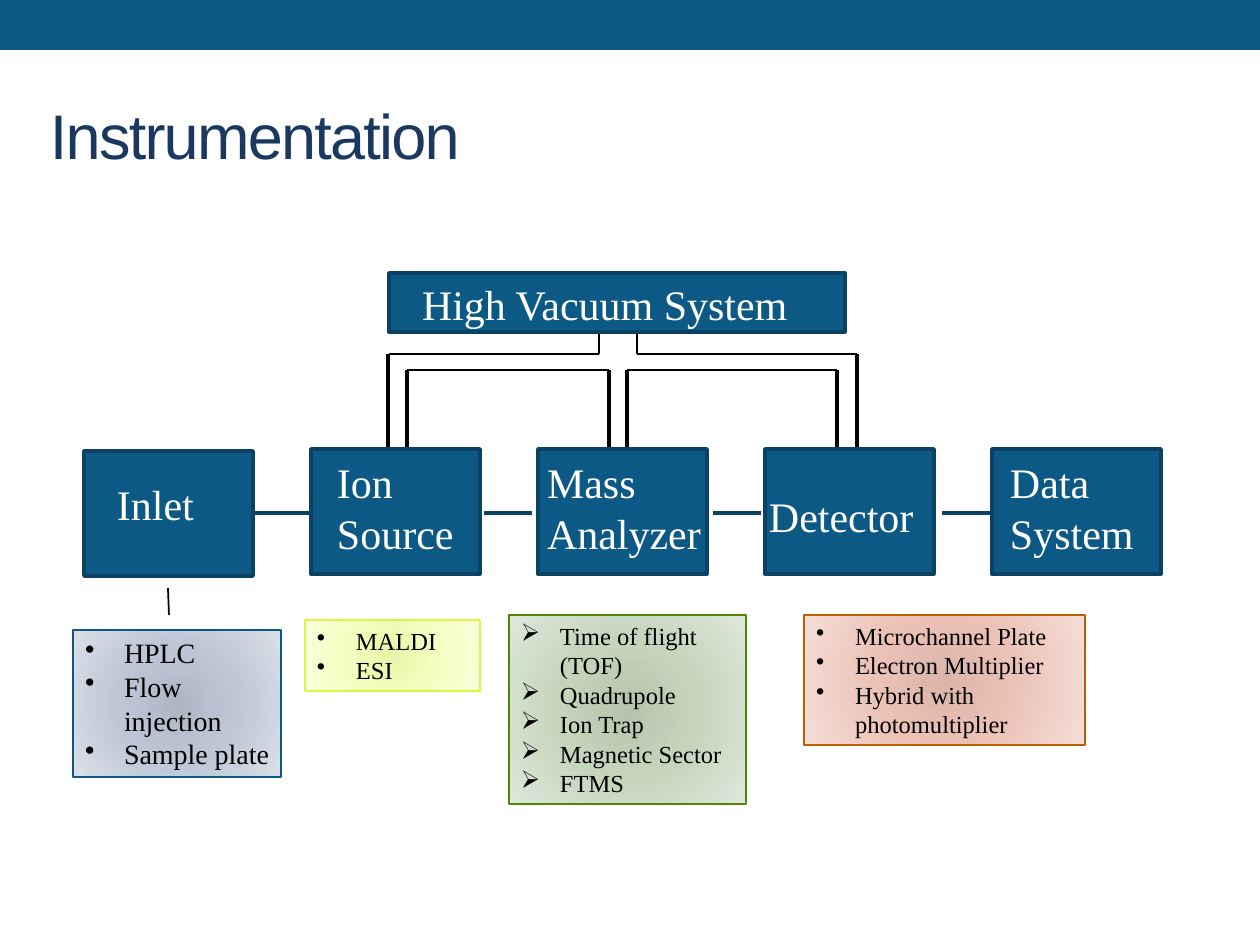
from dataclasses import dataclass

from pptx import Presentation
from pptx.dml.color import RGBColor
from pptx.enum.shapes import MSO_CONNECTOR as Conn, MSO_SHAPE as Geo
from pptx.enum.text import MSO_ANCHOR as Anchor, MSO_AUTO_SIZE as Fit, PP_ALIGN as Align
from pptx.oxml import parse_xml
from pptx.oxml.ns import nsdecls
from pptx.oxml.xmlchemy import OxmlElement
from pptx.util import Pt

EMU_PER_PX = 914400 / 126
BLUE, DARK_BLUE, NAVY = "0C5986", "094263", "1B3861"
BLACK, WHITE = "000000", "FFFFFF"
SERIF, SANS = "Times New Roman", "Arial"
MARGINS = {"margin_left": 12, "margin_right": 12, "margin_top": 6, "margin_bottom": 6}

Rect = tuple[int, int, int, int]


@dataclass
class Label:
    at: Rect
    lines: list[str]


@dataclass
class Wires:
    color: str
    width: float
    ends: list[Rect]


@dataclass
class Panel:
    at: Rect
    stops: tuple[str, str, str]
    border: str
    size: int
    bullet: str
    items: list[str]


STAGE_LEFT, STAGE_STEP, STAGE_W, STAGE_H = 84, 227, 169, 125
STAGE_TOPS = [451, 449, 449, 449, 449]
VACUUM = (389, 273, 456, 59)

LABELS = [
    Label((105, 473, 103, 64), ["Inlet"]),
    Label((325, 451, 151, 115), ["Ion", "Source"]),
    Label((535, 451, 183, 115), ["Mass", "Analyzer"]),
    Label((757, 485, 173, 64), ["Detector"]),
    Label((998, 451, 159, 115), ["Data", "System"]),
    Label((410, 273, 394, 64), ["High Vacuum System"]),
]

STAGE_Y, PIPE_BOTTOM, INNER_Y, OUTER_Y, VACUUM_Y = 513, 447, 370, 354, 333
WIRES = [
    Wires(DARK_BLUE, 2.08, [(255, STAGE_Y, 312, STAGE_Y)]
          + [(x, STAGE_Y, x + 48, STAGE_Y) for x in (484, 713, 942)]),
    Wires(BLACK, 2, [(x, PIPE_BOTTOM, x, INNER_Y) for x in (407, 609, 627, 837)]
          + [(x, PIPE_BOTTOM, x, OUTER_Y) for x in (388, 857)]),
    Wires(BLACK, 1, [(407, INNER_Y, 609, INNER_Y), (627, INNER_Y, 837, INNER_Y),
                     (389, OUTER_Y, 599, OUTER_Y), (637, OUTER_Y, 857, OUTER_Y),
                     (599, OUTER_Y, 599, VACUUM_Y), (637, OUTER_Y, 637, VACUUM_Y),
                     (168, 588, 169, 615)]),
]

PANELS = [
    Panel((305, 620, 175, 71), ("E6F5A9", "F2FFBE", "F8FFDC"), "DDF53D", 14, "•",
          ["MALDI", "ESI"]),
    Panel((509, 615, 237, 189), ("B5C5AD", "C4D5BC", "DFE8DB"), "508709", 14, "➢",
          ["Time of flight (TOF)", "Quadrupole", "Ion Trap", "Magnetic Sector", "FTMS"]),
    Panel((804, 615, 281, 130), ("DBB4AA", "ECC2B7", "F5DED8"), "BF5E00", 14, "•",
          ["Microchannel Plate", "Electron Multiplier", "Hybrid with photomultiplier"]),
    Panel((73, 630, 208, 147), ("ADB7C4", "BCC6D5", "DBE0E8"), BLUE, 16, "•",
          ["HPLC", "Flow injection", "Sample plate"]),
]


def px(n: int) -> int:
    """Turn pixels into EMU."""
    return round(n * EMU_PER_PX)


def rgb(value: str) -> RGBColor:
    """Turn a hex string into a colour."""
    return RGBColor.from_string(value)


def set_line(line, color: str, width: float) -> None:
    """Give a line its colour and its width in points."""
    line.color.rgb = rgb(color)
    line.width = Pt(width)


def add_box(s, at: Rect, line: str | None = None, width: float = 2.08):
    """Draw a blue rectangle with an optional border."""
    sp = s.shapes.add_shape(Geo.RECTANGLE, *map(px, at))
    sp.shadow.inherit = False
    sp.fill.solid()
    sp.fill.fore_color.rgb = rgb(BLUE)
    if line:
        set_line(sp.line, line, width)
    else:
        sp.line.fill.background()
    return sp


def set_frame(tf, **formats) -> None:
    """Apply the margins and the given values to a text frame."""
    for name, value in MARGINS.items():
        setattr(tf, name, px(value))
    for name, value in formats.items():
        setattr(tf, name, value)


def write(tf, lines: list[str], size: int, color: str, font: str, bullet: str = "") -> None:
    """Write one left-aligned paragraph for each line, bulleted on request."""
    for i, line in enumerate(lines):
        p = tf.add_paragraph() if i else tf.paragraphs[0]
        p.alignment = Align.LEFT
        if bullet:
            pPr = p._p.get_or_add_pPr()
            pPr.set("marL", str(px(39)))
            pPr.set("indent", str(-px(39)))
            bu = OxmlElement("a:buChar")
            bu.set("char", bullet)
            pPr.append(bu)
        r = p.add_run()
        r.text = line
        for name, value in {"size": Pt(size), "name": font}.items():
            setattr(r.font, name, value)
        r.font.color.rgb = rgb(color)


def add_title(s, text: str) -> None:
    """Add the slide title with tightened letters."""
    tf = s.shapes.add_textbox(*map(px, (38, 66, 1134, 136))).text_frame
    set_frame(tf, word_wrap=True, vertical_anchor=Anchor.MIDDLE)
    write(tf, [text], 36, NAVY, SANS)
    tf.paragraphs[0].runs[0].font._element.set("spc", "-100")


def add_label(s, label: Label) -> None:
    """Add a white label that does not wrap."""
    tf = s.shapes.add_textbox(*map(px, label.at)).text_frame
    set_frame(tf, word_wrap=False, auto_size=Fit.SHAPE_TO_FIT_TEXT)
    write(tf, label.lines, 24, WHITE, SERIF)


def add_wires(s, wires: Wires) -> None:
    """Draw straight lines that share one style."""
    for ends in wires.ends:
        c = s.shapes.add_connector(Conn.STRAIGHT, *map(px, ends))
        set_line(c.line, wires.color, wires.width)
        c._element.spPr.append(OxmlElement("a:effectLst"))


def add_panel(s, panel: Panel) -> None:
    """Draw a bulleted list on a radial gradient."""
    sp = add_box(s, panel.at, panel.border, 0.75)
    stops = "".join(f'<a:gs pos="{pos}"><a:srgbClr val="{color}"/></a:gs>'
                    for pos, color in zip((0, 45000, 100000), panel.stops))
    grad = parse_xml(
        f'<a:gradFill {nsdecls("a")} rotWithShape="1"><a:gsLst>{stops}</a:gsLst>'
        '<a:path path="circle"><a:fillToRect l="100000" t="100000" r="100000" b="100000"/>'
        '</a:path></a:gradFill>')
    spPr = sp._element.spPr
    spPr.replace(spPr.find("{*}solidFill"), grad)
    set_frame(sp.text_frame, word_wrap=True, auto_size=Fit.SHAPE_TO_FIT_TEXT,
              vertical_anchor=Anchor.TOP)
    write(sp.text_frame, panel.items, panel.size, BLACK, SERIF, panel.bullet)


def main() -> None:
    """Build the slide and save it."""
    prs = Presentation()
    prs.slide_width, prs.slide_height = px(1260), px(945)
    s = prs.slides.add_slide(prs.slide_layouts[6])
    add_box(s, (0, 0, 1260, 50))
    add_title(s, "Instrumentation")
    for i, top in enumerate(STAGE_TOPS):
        add_box(s, (STAGE_LEFT + i * STAGE_STEP, top, STAGE_W, STAGE_H), DARK_BLUE)
    for wires in WIRES:
        add_wires(s, wires)
    add_box(s, VACUUM, DARK_BLUE)
    for label in LABELS:
        add_label(s, label)
    for panel in PANELS:
        add_panel(s, panel)
    prs.save("out.pptx")


if __name__ == "__main__":
    main()
